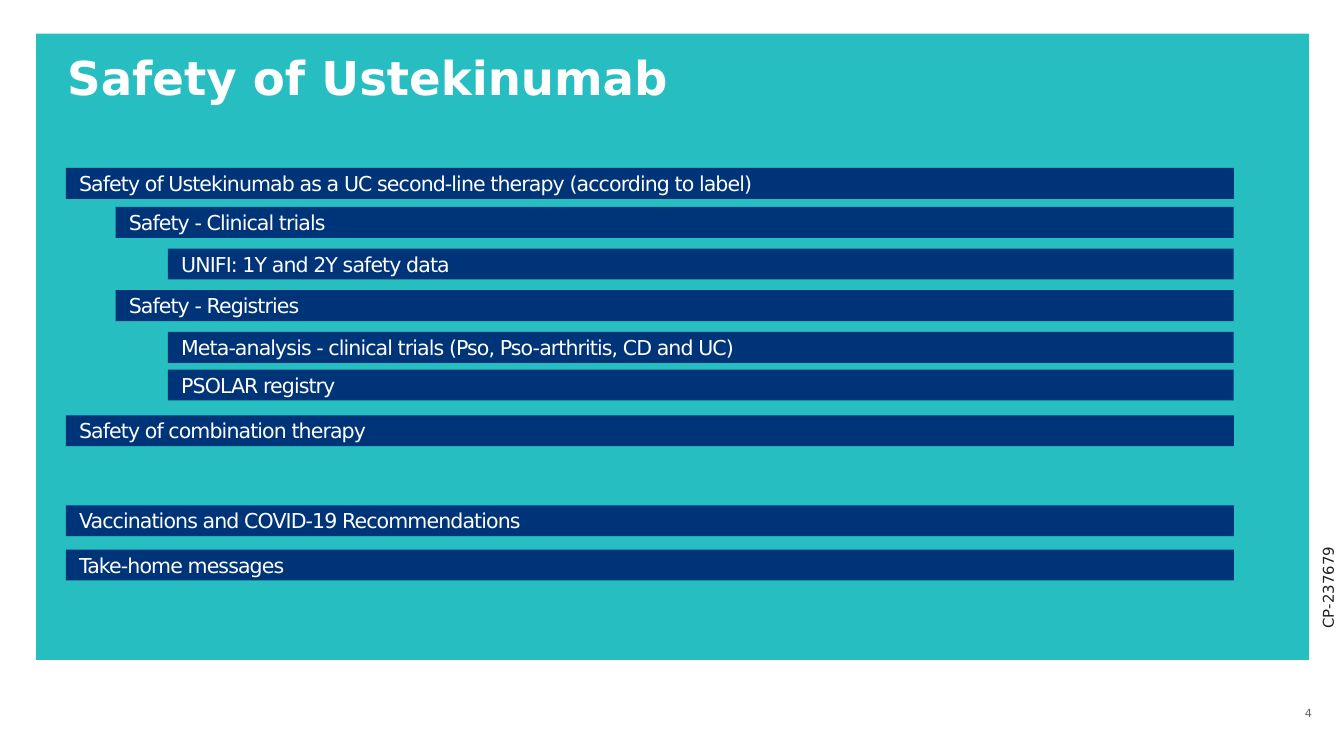
from pptx import Presentation
from pptx.dml.color import RGBColor
from pptx.enum.shapes import MSO_SHAPE as SHAPE
from pptx.enum.text import MSO_ANCHOR as ANCHOR, PP_ALIGN as ALIGN
from pptx.util import Inches, Pt

FONT = "DejaVu Sans"
TEAL, NAVY, WHITE, GREY, INK = "27BEC1", "003479", "FFFFFF", "646464", "212121"
TITLE = "Safety of Ustekinumab"
AGENDA = [
    (0, 1.25, "Safety of Ustekinumab as a UC second-line therapy (according to label)"),
    (1, 1.54, "Safety - Clinical trials"),
    (2, 1.85, "UNIFI: 1Y and 2Y safety data"),
    (1, 2.16, "Safety - Registries"),
    (2, 2.47, "Meta-analysis - clinical trials (Pso, Pso-arthritis, CD and UC)"),
    (2, 2.75, "PSOLAR registry"),
    (0, 3.09, "Safety of combination therapy"),
    (0, 3.76, "Vaccinations and COVID-19 Recommendations"),
    (0, 4.09, "Take-home messages"),
]
LEVEL_LEFT = [0.49, 0.86, 1.25]
BAR_RIGHT, BAR_HEIGHT = 9.18, 0.23


def rgb(color):
    return RGBColor.from_string(color)


def add_rect(s, box, color):
    sp = s.shapes.add_shape(SHAPE.RECTANGLE, *map(Inches, box))
    sp.shadow.inherit = False
    sp.fill.solid()
    sp.fill.fore_color.rgb = rgb(color)
    sp.line.fill.background()
    return sp


def write(sp, text, size, color, align=ALIGN.LEFT, anchor=ANCHOR.MIDDLE):
    tf = sp.text_frame
    tf.word_wrap = True
    tf.vertical_anchor = anchor
    p = tf.paragraphs[0]
    p.text = text
    p.alignment = align
    p.font.name = FONT
    p.font.size = Pt(size)
    p.font.color.rgb = rgb(color)
    return p


def add_text(s, box, *args, **kwargs):
    sp = s.shapes.add_textbox(*map(Inches, box))
    return sp, write(sp, *args, **kwargs)


prs = Presentation()
prs.slide_width = Inches(10)
prs.slide_height = prs.slide_width * 9 // 16
s = prs.slides.add_slide(prs.slide_layouts[6])

add_rect(s, (0.27, 0.25, 9.47, 4.66), TEAL)
add_text(s, (9.55, 5.17, 0.31, 0.27), "4", 6, GREY, align=ALIGN.RIGHT)

title, p = add_text(s, (0.5, 0.41, 9.01, 0.38), TITLE, 25, WHITE, anchor=ANCHOR.TOP)
tf = title.text_frame
tf.margin_left = tf.margin_right = tf.margin_top = tf.margin_bottom = 0
p.line_spacing = 0.9
p.font.bold = True

for level, top, text in AGENDA:
    left = LEVEL_LEFT[level]
    bar = add_rect(s, (left, top, BAR_RIGHT - left, BAR_HEIGHT), NAVY)
    p = write(bar, text, 11, WHITE)
    p.runs[0].font._element.set("spc", "-50")

code, p = add_text(s, (9.44, 4.21, 0.89, 0.24), "CP-237679", 8, INK, anchor=ANCHOR.TOP)
code.rotation = 270

prs.save("out.pptx")
